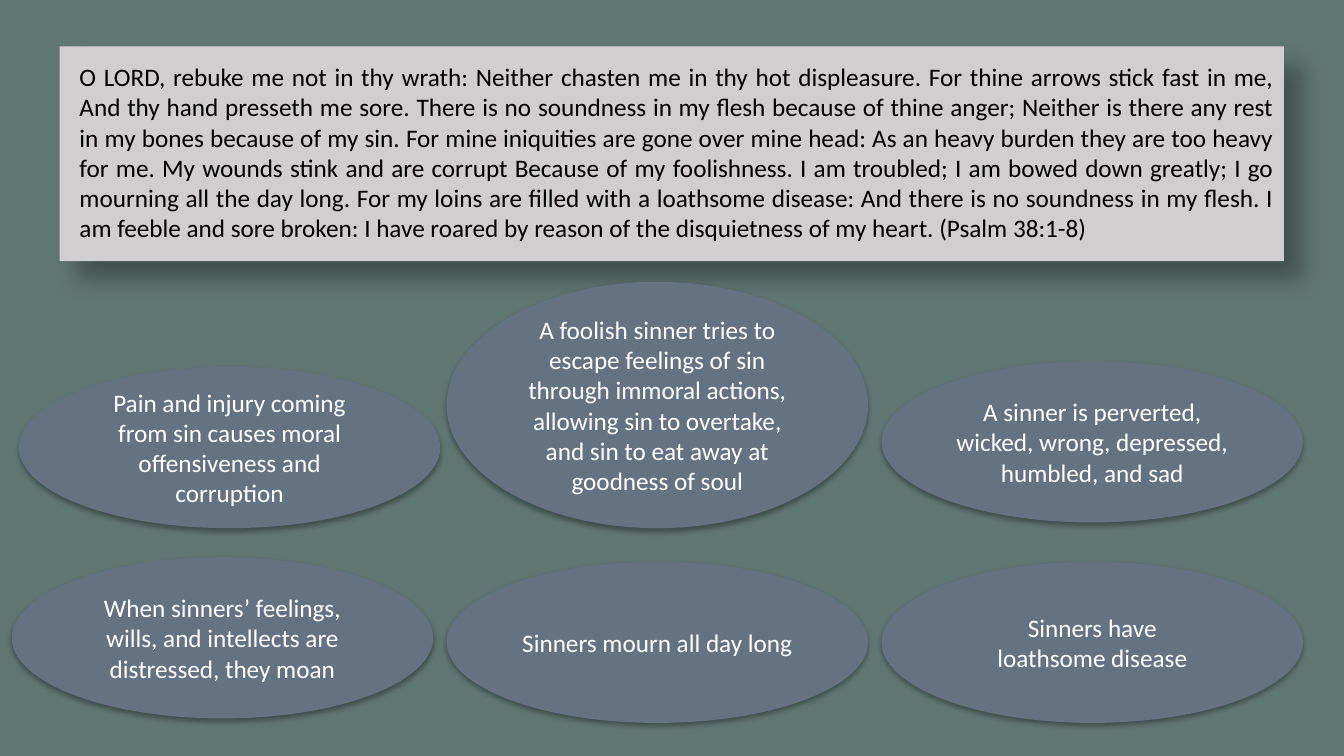
import pptx
import pptx.dml.color
import pptx.enum.shapes
import pptx.enum.text
import pptx.oxml
import pptx.oxml.ns
import pptx.util

Pt = pptx.util.Pt
RGB = pptx.dml.color.RGBColor.from_string
SHAPES = pptx.enum.shapes.MSO_SHAPE
ALIGN = pptx.enum.text.PP_ALIGN
COLORS = {
    "background": "607673",
    "panel": "D0CECE",
    "oval": "647281",
    "verse": "000000",
    "lesson": "FFFFFF",
    "shadow": "000000",
}


def add_shadowed_shape(kind, box, color, opacity, blur, distance, angle):
    """Add a borderless filled shape; blur and distance are in points, angle in degrees."""
    shape = slide.shapes.add_shape(kind, *map(Pt, box))
    shape.fill.solid()
    shape.fill.fore_color.rgb = RGB(color)
    shape.line.fill.background()
    shape.shadow.inherit = False
    effects = shape._element.spPr.find(pptx.oxml.ns.qn("a:effectLst"))
    effects.append(pptx.oxml.parse_xml(
        f'<a:outerShdw {pptx.oxml.ns.nsdecls("a")} blurRad="{Pt(blur)}" '
        f'dist="{Pt(distance)}" dir="{angle * 60000}" algn="tl" rotWithShape="0">'
        f'<a:srgbClr val="{COLORS["shadow"]}"><a:alpha val="{opacity * 1000}"/></a:srgbClr>'
        '</a:outerShdw>'))
    return shape


def write(frame, text, color, alignment):
    frame.word_wrap = True
    frame.text = text
    for paragraph in frame.paragraphs:
        paragraph.alignment = alignment
        for run in paragraph.runs:
            run.font.name = "Calibri"
            run.font.size = Pt(18)
            run.font.color.rgb = RGB(color)


deck = pptx.Presentation()
deck.slide_width, deck.slide_height = Pt(960), Pt(540)
slide = deck.slides.add_slide(deck.slide_layouts[6])
slide.background.fill.solid()
slide.background.fill.fore_color.rgb = RGB(COLORS["background"])

# Psalm passage on its panel
add_shadowed_shape(SHAPES.RECTANGLE, (42.6, 33.1, 874.6, 153.4), COLORS["panel"], 30, 15, 18, 45)
passage = slide.shapes.add_textbox(Pt(49.7), Pt(40.3), Pt(867.5), Pt(138))
write(
    passage.text_frame,
    "O LORD, rebuke me not in thy wrath: Neither chasten me in thy hot displeasure. "
    "For thine arrows stick fast in me, And thy hand presseth me sore. "
    "There is no soundness in my flesh because of thine anger; "
    "Neither is there any rest in my bones because of my sin. "
    "For mine iniquities are gone over mine head: "
    "As an heavy burden they are too heavy for me. "
    "My wounds stink and are corrupt Because of my foolishness. "
    "I am troubled; I am bowed down greatly; I go mourning all the day long. "
    "For my loins are filled with a loathsome disease: "
    "And there is no soundness in my flesh. I am feeble and sore broken: "
    "I have roared by reason of the disquietness of my heart. (Psalm 38:1-8)",
    COLORS["verse"], ALIGN.JUSTIFY)

# Lessons: left, top, height, text
OVAL_WIDTH = 301
LOW = 115.2
lessons = [
    (13.5, 262.1, LOW, "Pain and injury coming from sin causes moral offensiveness and corruption"),
    (319, 201.3, 176, "A foolish sinner tries to escape feelings of sin through immoral actions, "
                      "allowing sin to overtake, and sin to eat away at goodness of soul"),
    (629.7, 258, LOW, "A sinner is perverted, wicked, wrong, depressed, humbled, and sad"),
    (8.4, 398, LOW, "When sinners’ feelings, wills, and intellects are distressed, they moan"),
    (319, 401.2, LOW, "Sinners mourn all day long"),
    (629.7, 401.2, LOW, "Sinners have\nloathsome disease"),
]
for left, top, height, lesson in lessons:
    oval = add_shadowed_shape(SHAPES.OVAL, (left, top, OVAL_WIDTH, height),
                              COLORS["oval"], 32, 3.5, 2.2, 90)
    oval.text_frame.vertical_anchor = pptx.enum.text.MSO_ANCHOR.MIDDLE
    write(oval.text_frame, lesson, COLORS["lesson"], ALIGN.CENTER)

deck.save("out.pptx")
